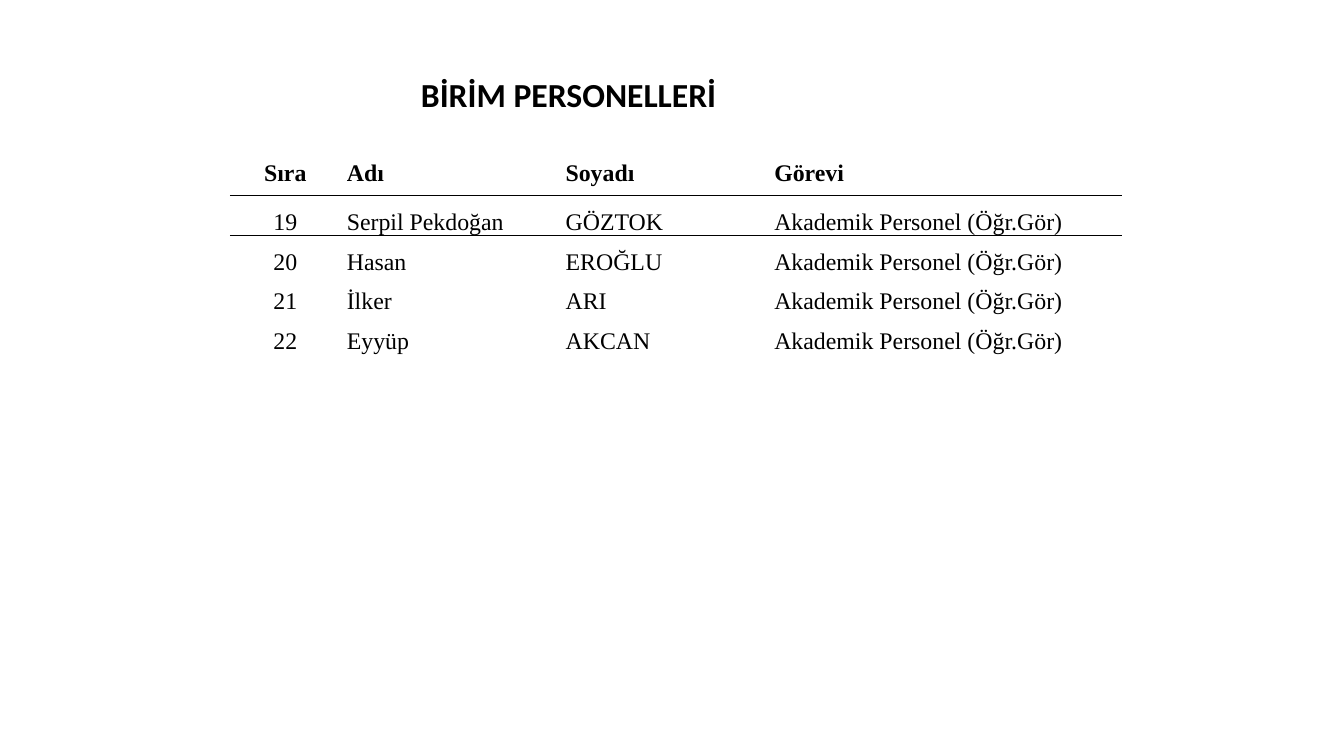
from pptx import Presentation
from pptx.dml.color import RGBColor
from pptx.enum.text import MSO_ANCHOR, MSO_AUTO_SIZE, PP_ALIGN
from pptx.oxml.ns import qn
from pptx.util import Inches, Pt
from lxml.etree import SubElement

COLORS = {"ink": "000000", "page": "FFFFFF"}
PLAIN = "{2D5ABB26-0587-4C30-8999-92F81FD0307C}"  # no style, no grid

STAFF = [
    ("Serpil Pekdoğan", "GÖZTOK"),
    ("Hasan", "EROĞLU"),
    ("İlker", "ARI"),
    ("Eyyüp", "AKCAN"),
]
FIRST = 19
HEADS = ("Sıra", "Adı", "Soyadı", "Görevi")
DUTY = "Akademik Personel (Öğr.Gör)"


class Page:
    """Style and current slide, on a grid of 133.3 columns by 75 rows."""

    head, body = "Calibri", "Times New Roman"

    def __init__(self, deck):
        self.col = deck.slide_width / 133.3
        self.row = deck.slide_height / 75
        self.slide = deck.slides.add_slide(deck.slide_layouts[5])
        fill = self.slide.background.fill
        fill.solid()
        fill.fore_color.rgb = RGBColor.from_string(COLORS["page"])

    def x(self, cols):
        return round(cols * self.col)

    def y(self, rows):
        return round(rows * self.row)

    def run(self, para, text, font, size, bold):
        run = para.add_run()
        run.text = text
        run.font.name, run.font.size, run.font.bold = font, Pt(size), bold
        run.font.color.rgb = RGBColor.from_string(COLORS["ink"])

    def title(self, text, left, top, width, height):
        shape = self.slide.shapes.title
        shape.left, shape.top = self.x(left), self.y(top)
        shape.width, shape.height = self.x(width), self.y(height)
        frame = shape.text_frame
        frame.word_wrap = True
        frame.auto_size = MSO_AUTO_SIZE.NONE
        frame.vertical_anchor = MSO_ANCHOR.TOP
        para = frame.paragraphs[0]
        para.alignment = PP_ALIGN.CENTER
        self.run(para, text, self.head, 24, True)

    def border(self, cell, side, width):
        props = cell._tc.get_or_add_tcPr()
        line = SubElement(props, qn(f"a:{side}"), w=str(Pt(width)))
        fill = SubElement(line, qn("a:solidFill"))
        SubElement(fill, qn("a:srgbClr"), val=COLORS["ink"])

    def cell(self, cell, text, center, bold, rule):
        cell.margin_left = cell.margin_right = Inches(0.06)
        cell.margin_top = cell.margin_bottom = 0
        cell.vertical_anchor = MSO_ANCHOR.TOP if bold else MSO_ANCHOR.MIDDLE
        para = cell.text_frame.paragraphs[0]
        para.alignment = PP_ALIGN.CENTER if center else PP_ALIGN.LEFT
        para.line_spacing = 1.5
        self.run(para, text, self.body, 17, bold)
        if rule:
            self.border(cell, "lnB", rule)
        cell.fill.background()

    def table(self, data, left, top, cols, rows, rules):
        frame = self.slide.shapes.add_table(
            len(data), len(cols), self.x(left), self.y(top),
            self.x(sum(cols)), self.y(sum(rows)))
        table = frame.table
        table.first_row = table.horz_banding = False
        table._tbl.tblPr.find(qn("a:tableStyleId")).text = PLAIN
        for part, width in zip(table.columns, cols):
            part.width = self.x(width)
        for part, height in zip(table.rows, rows):
            part.height = self.y(height)
        for r, line in enumerate(data):
            for c, text in enumerate(line):
                self.cell(table.cell(r, c), text, c == 0, r == 0, rules.get(r))


def main():
    deck = Presentation()
    deck.slide_width, deck.slide_height = Inches(13.33), Inches(7.5)
    page = Page(deck)

    # Heading
    page.title("BİRİM PERSONELLERİ", 19.4, 6.8, 74, 9.1)

    # Staff list, ruled under the header and the first person
    data = [HEADS] + [(str(n), *name, DUTY) for n, name in enumerate(STAFF, FIRST)]
    page.table(data, 22.8, 14.6, (11, 21.7, 20.7, 35.1),
               [4.8] + [1.7] * len(STAFF), {0: 1, 1: 0.5})

    deck.save("out.pptx")


if __name__ == "__main__":
    main()
